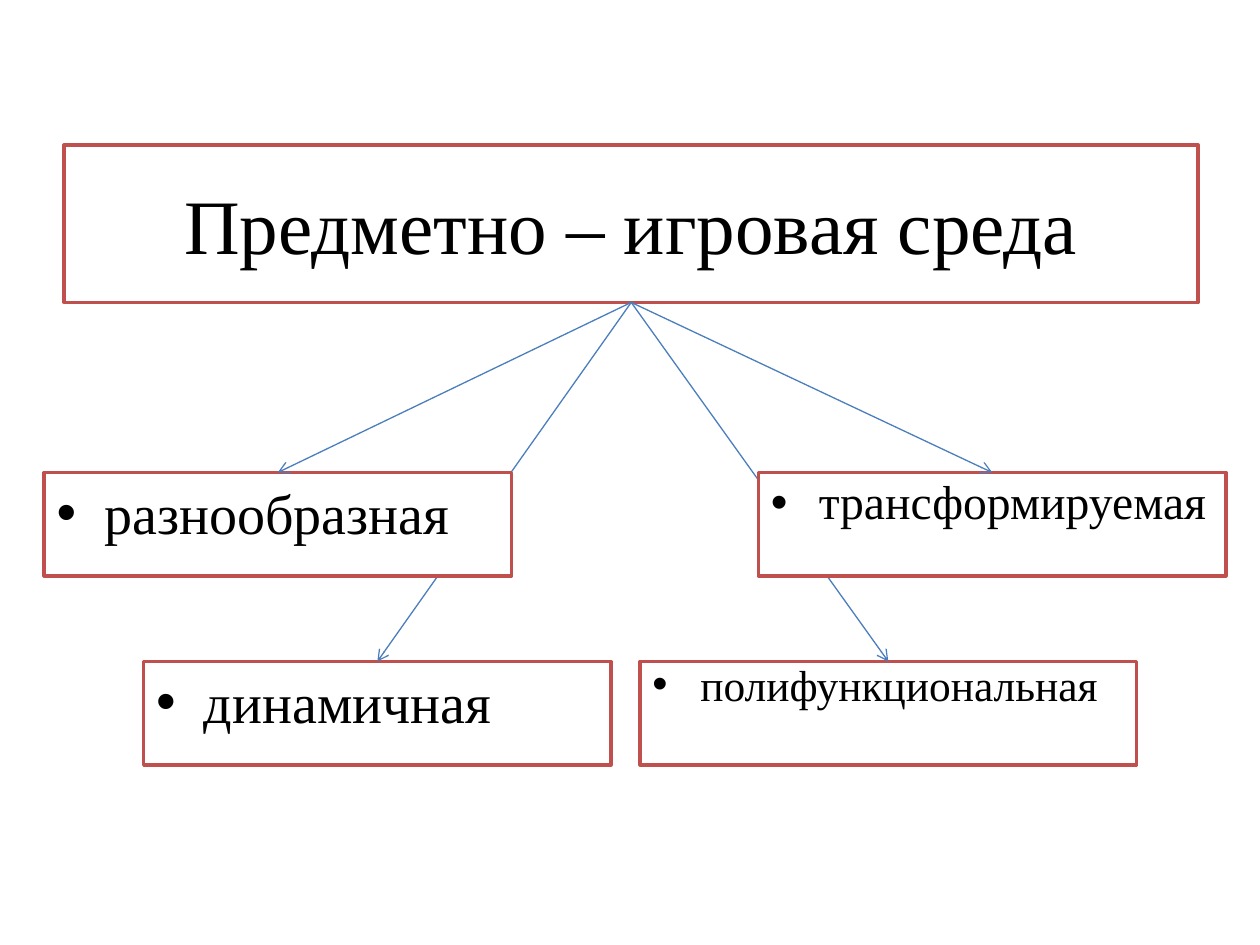
from lxml import etree
from pptx import Presentation
from pptx.dml.color import RGBColor
from pptx.enum import shapes, text
from pptx.oxml import ns
from pptx.util import Inches, Pt

FONT = "Times New Roman"
BLACK = RGBColor(0x00, 0x00, 0x00)
WHITE = RGBColor(0xFF, 0xFF, 0xFF)
RED = RGBColor(0xC0, 0x50, 0x4D)
BLUE = RGBColor(0x4B, 0x7E, 0xBC)

TITLE = "Предметно – игровая среда"
BOX_H = 0.82
ROWS = [
    (5.25, [("динамичная", 1.14, 3.71, 32, 1.0),
            ("полифункциональная", 5.08, 3.94, 24.8, 0.8)]),
    (3.75, [("разнообразная", 0.35, 3.71, 32, 1.0),
            ("трансформируемая", 6.02, 3.71, 27.2, 0.9)]),
]


def sub(parent, tag, **attrs):
    return etree.SubElement(parent, ns.qn(tag), attrs)


def add_box(s, label, x, y, w, h, size, anchor, bullet=False):
    sp = s.shapes.add_shape(shapes.MSO_SHAPE.RECTANGLE,
                            Inches(x), Inches(y), Inches(w), Inches(h))
    sp.shadow.inherit = False
    sp.fill.solid()
    sp.fill.fore_color.rgb = WHITE
    sp.line.color.rgb = RED
    sp.line.width = Pt(2)
    tf = sp.text_frame
    tf.word_wrap = True
    tf.vertical_anchor = anchor
    p = tf.paragraphs[0]
    p.text = label
    p.alignment = text.PP_ALIGN.LEFT if bullet else text.PP_ALIGN.CENTER
    if bullet:
        add_bullet(p)
    p.font.name = FONT
    p.font.size = Pt(size)
    p.font.color.rgb = BLACK
    return sp


def add_bullet(p):
    pPr = p._p.get_or_add_pPr()
    indent = Inches(0.38)
    pPr.set("marL", str(indent))
    pPr.set("indent", str(-indent))
    sub(sub(pPr, "a:spcBef"), "a:spcPct", val="20000")
    sub(pPr, "a:buFont", typeface="Arial")
    sub(pPr, "a:buChar", char="•")


def add_arrow(s, start, end):
    c = s.shapes.add_connector(shapes.MSO_CONNECTOR.STRAIGHT, 0, 0, 0, 0)
    c.begin_connect(start, 2)
    c.end_connect(end, 0)
    c.line.color.rgb = BLUE
    c.line.width = Pt(0.75)
    sub(c.line._get_or_add_ln(), "a:tailEnd", type="arrow")
    sub(c._element.spPr, "a:effectLst")


def main():
    prs = Presentation()
    prs.slide_width, prs.slide_height = Inches(10), Inches(7.5)
    s = prs.slides.add_slide(prs.slide_layouts[6])
    title = add_box(s, TITLE, 0.51, 1.15, 9, 1.25, 44, text.MSO_ANCHOR.MIDDLE)
    for y, items in ROWS:
        boxes = []
        for label, x, w, size, spacing in items:
            sp = add_box(s, label, x, y, w, BOX_H, size, text.MSO_ANCHOR.TOP, True)
            sp.text_frame.paragraphs[0].line_spacing = spacing
            boxes.append(sp)
        for sp in boxes:
            add_arrow(s, title, sp)
    prs.save("out.pptx")


if __name__ == "__main__":
    main()
